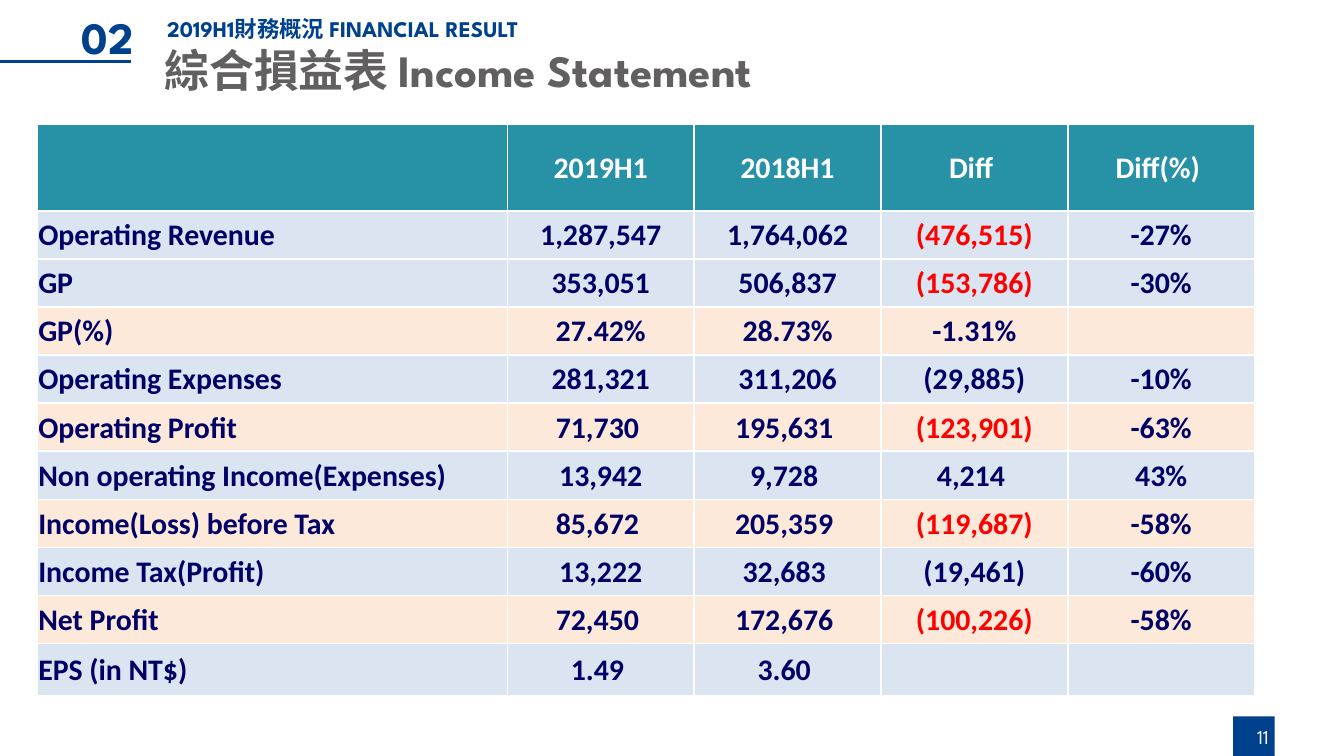
from lxml import etree
from pptx import Presentation, util as u
from pptx.dml.color import RGBColor
from pptx.enum import shapes, text
from pptx.oxml.ns import qn

WIDE, HIGH = 10, 5.625
COLS, ROWS = 100, 56.25
HUES = {"blue": "00418E", "gray": "615F5F", "white": "FFFFFF", "teal": "2791A6",
        "ice": "DBE5F1", "peach": "FDE9D9", "navy": "000066", "red": "FF0000"}
LATIN, HAN, BODY = "League Spartan", "Noto Sans CJK SC", "Calibri"
LEFT, MID, RIGHT = text.PP_ALIGN.LEFT, text.PP_ALIGN.CENTER, text.PP_ALIGN.RIGHT

HEAD = ["", "2019H1", "2018H1", "Diff ", "Diff(%) "]
DATA = [
    ("ice", "Operating Revenue", "1,287,547", "1,764,062", "(476,515)", "-27%"),
    ("ice", "GP", "353,051", "506,837", "(153,786)", "-30%"),
    ("peach", "GP(%)", "27.42%", "28.73%", "-1.31%", ""),
    ("ice", "Operating Expenses", "281,321", "311,206", "(29,885)", "-10%"),
    ("peach", "Operating Profit", "71,730 ", "195,631 ", "(123,901)", "-63%"),
    ("ice", "Non operating Income(Expenses)", "13,942", "9,728 ", "4,214 ", "43%"),
    ("peach", "Income(Loss) before Tax", "85,672 ", "205,359 ", "(119,687)", "-58%"),
    ("ice", "Income Tax(Profit)", "13,222", "32,683 ", "(19,461)", "-60%"),
    ("peach", "Net Profit", "72,450 ", "172,676 ", "(100,226)", "-58%"),
    ("ice", "EPS (in NT$)", "1.49 ", "3.60 ", "", ""),
]
LOSSES = {"(476,515)", "(153,786)", "(123,901)", "(119,687)", "(100,226)"}


def hue(name):
    return RGBColor.from_string(HUES[name])


def across(cols):
    return u.Inches(cols * WIDE / COLS)


def down(rows):
    return u.Inches(rows * HIGH / ROWS)


def frame(left, top, width, height):
    return across(left), down(top), across(width), down(height)


class Deck:
    """Holds the style and the current slide; lengths are grid columns and rows."""

    def __init__(self):
        self.show = Presentation()
        self.show.slide_width = u.Inches(WIDE)
        self.show.slide_height = u.Inches(HIGH)
        self.slide = self.show.slides.add_slide(self.show.slide_layouts[6])

    def run(self, para, words, size, color, font, bold=True):
        run = para.add_run()
        run.text = words
        run.font.size = u.Pt(size)
        run.font.bold = bold
        run.font.name = font
        run.font.color.rgb = hue(color)
        etree.SubElement(run.font._element, qn("a:ea"), typeface=HAN)

    def box(self, place, color):
        shape = self.slide.shapes.add_shape(shapes.MSO_SHAPE.RECTANGLE, *frame(*place))
        shape.shadow.inherit = False
        shape.fill.solid()
        shape.fill.fore_color.rgb = hue(color)
        shape.line.fill.background()

    def rule(self, start, end, color, width):
        line = self.slide.shapes.add_connector(
            shapes.MSO_CONNECTOR.STRAIGHT, across(start[0]), down(start[1]),
            across(end[0]), down(end[1]))
        line.line.color.rgb = hue(color)
        line.line.width = u.Pt(width)
        etree.SubElement(line._element.spPr, qn("a:effectLst"))

    def label(self, place, runs, size, color, bold=True, align=LEFT, middle=False, gap=0):
        body = self.slide.shapes.add_textbox(*frame(*place)).text_frame
        body.word_wrap = True
        body.vertical_anchor = text.MSO_ANCHOR.MIDDLE if middle else text.MSO_ANCHOR.TOP
        para = body.paragraphs[0]
        para.alignment = align
        para.space_before = u.Pt(gap)
        for words, font in runs:
            self.run(para, words, size, color, font, bold)

    def edge(self, cell, side, width):
        line = etree.SubElement(cell._tc.get_or_add_tcPr(), qn("a:ln" + side),
                                w=str(u.Pt(width)))
        fill = etree.SubElement(line, qn("a:solidFill"))
        etree.SubElement(fill, qn("a:srgbClr"), val=HUES["white"])

    def cell(self, cell, words, fill, color, align, sides):
        cell.margin_left = cell.margin_right = cell.margin_top = u.Inches(0.01)
        cell.margin_bottom = 0
        cell.vertical_anchor = text.MSO_ANCHOR.MIDDLE
        for side, width in sides.items():
            self.edge(cell, side, width)
        cell.fill.solid()
        cell.fill.fore_color.rgb = hue(fill)
        para = cell.text_frame.paragraphs[0]
        para.alignment = align
        if words:
            self.run(para, words, 16, color, BODY)

    def table(self, place, widths, heights, lines):
        grid = self.slide.shapes.add_table(len(lines), len(widths), *frame(*place)).table
        grid.first_row = grid.horz_banding = False
        for col, width in zip(grid.columns, widths):
            col.width = across(width)
        for row, height in zip(grid.rows, heights):
            row.height = down(height)
        for r, (fill, *line) in enumerate(lines):
            sides = {"L": 1, "R": 1, "T": 1.5 if r == 1 else 1, "B": 1 if r else 1.5}
            for c, words in enumerate(line):
                color = "red" if words in LOSSES else "navy" if r else "white"
                align = MID if c else LEFT
                self.cell(grid.cell(r, c), words, fill, color, align, sides)


def main():
    deck = Deck()
    deck.box((91.75, 53.3, 3.1, 2.95), "blue")
    deck.rule((0, 4.6), (9.75, 4.6), "blue", 1.5)
    deck.label((90.8, 53.3, 4.6, 3), [("11", LATIN)], 10.5, "white",
               bold=False, align=RIGHT, middle=True)
    deck.label((11.45, 0.55, 82.5, 3.2), [("2019H1財務概況 FINANCIAL RESULT", LATIN)],
               12, "blue", middle=True)
    deck.label((11.25, 2.7, 79.5, 5.3),
               [("綜合損益", HAN), ("表 Income Statement", LATIN)], 24, "gray", gap=4.8)
    deck.label((5.1, 0.2, 7.1, 4.7), [("02", LATIN)], 24, "blue", gap=4.8)
    deck.table((2.75, 9.25, 90.6, 42.5), [35] + [13.9] * 4,
               [6.43] + [3.58] * 9 + [3.85], [("teal", *HEAD)] + DATA)
    deck.show.save("out.pptx")


if __name__ == "__main__":
    main()
